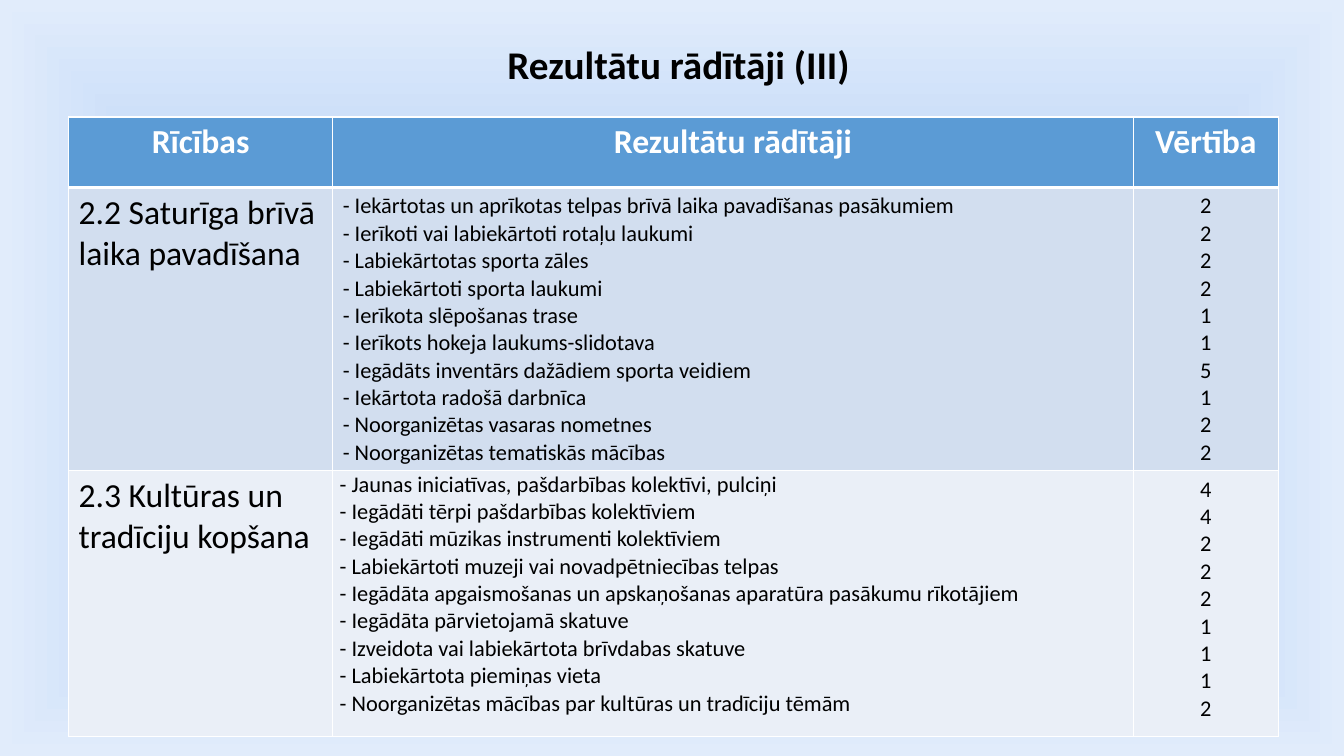
from dataclasses import dataclass

from pptx import Presentation
from pptx.dml.color import RGBColor
from pptx.enum.text import MSO_ANCHOR, PP_ALIGN
from pptx.oxml import parse_xml
from pptx.oxml.ns import nsdecls
from pptx.util import Inches, Pt


@dataclass(frozen=True)
class Theme:
    font: str = "Calibri"
    black: str = "000000"
    white: str = "FFFFFF"
    head: str = "5B9BD5"
    bands: tuple = ("D2DEEF", "EAEFF7")
    glow: tuple = ((0, "FFD966"), (50, "C1D8F8"), (100, "E1ECFB"))
    title: int = 28
    large: int = 24
    small: int = 16


theme = Theme()


def write(frame, text, size=theme.large, color=theme.black, bold=False,
          align=PP_ALIGN.LEFT, space=1.0):
    """Fill a text frame, one paragraph for each line of text."""
    frame.word_wrap = True
    for i, line in enumerate(text.split("\n")):
        para = frame.paragraphs[0] if i == 0 else frame.add_paragraph()
        para.alignment = align
        para.line_spacing = space
        run = para.add_run()
        run.text = line
        run.font.name = theme.font
        run.font.size = Pt(size)
        run.font.bold = bold
        run.font.color.rgb = RGBColor.from_string(color)


def paint(cell, color, base=1):
    """Set the fill and the white borders of a cell; base is the lower width."""
    props = cell._tc.get_or_add_tcPr()
    for side, width in (("L", 1), ("R", 1), ("T", 1), ("B", base)):
        props.append(parse_xml(
            f'<a:ln{side} {nsdecls("a")} w="{Pt(width)}"><a:solidFill>'
            f'<a:srgbClr val="{theme.white}"/></a:solidFill></a:ln{side}>'))
    cell.fill.solid()
    cell.fill.fore_color.rgb = RGBColor.from_string(color)


deck = Presentation()
deck.slide_width, deck.slide_height = Inches(13.33), Inches(7.5)
slide = deck.slides.add_slide(deck.slide_layouts[6])

# Background gradient, from the centre outwards
slide.background.fill.gradient()
grad = slide.element.xpath(".//p:bgPr/a:gradFill")[0]
stops = "".join(f'<a:gs pos="{pos * 1000}"><a:srgbClr val="{color}"/></a:gs>'
                for pos, color in theme.glow)
grad.getparent().replace(grad, parse_xml(
    f'<a:gradFill {nsdecls("a")} rotWithShape="1"><a:gsLst>{stops}</a:gsLst>'
    '<a:path path="shape"><a:fillToRect l="50000" t="50000" r="50000" b="50000"/>'
    '</a:path></a:gradFill>'))

# Title
box = slide.shapes.add_textbox(Inches(0.98), Inches(0.26), Inches(11.5), Inches(0.81))
box.text_frame.vertical_anchor = MSO_ANCHOR.MIDDLE
write(box.text_frame, "Rezultātu rādītāji (III)", size=theme.title, bold=True,
      align=PP_ALIGN.CENTER, space=0.9)

# Table content: action, then pairs of indicator and value
heads = ("Rīcības", "Rezultātu rādītāji", "Vērtība")
groups = (
    ("2.2 Saturīga brīvā laika pavadīšana", (
        ("Iekārtotas un aprīkotas telpas brīvā laika pavadīšanas pasākumiem", 2),
        ("Ierīkoti vai labiekārtoti rotaļu laukumi", 2),
        ("Labiekārtotas sporta zāles", 2),
        ("Labiekārtoti sporta laukumi", 2),
        ("Ierīkota slēpošanas trase", 1),
        ("Ierīkots hokeja laukums-slidotava", 1),
        ("Iegādāts inventārs dažādiem sporta veidiem", 5),
        ("Iekārtota radošā darbnīca", 1),
        ("Noorganizētas vasaras nometnes", 2),
        ("Noorganizētas tematiskās mācības", 2))),
    ("2.3 Kultūras un tradīciju kopšana", (
        ("Jaunas iniciatīvas, pašdarbības kolektīvi, pulciņi", 4),
        ("Iegādāti tērpi pašdarbības kolektīviem", 4),
        ("Iegādāti mūzikas instrumenti kolektīviem", 2),
        ("Labiekārtoti muzeji vai novadpētniecības telpas", 2),
        ("Iegādāta apgaismošanas un apskaņošanas aparatūra pasākumu rīkotājiem", 2),
        ("Iegādāta pārvietojamā skatuve", 1),
        ("Izveidota vai labiekārtota brīvdabas skatuve", 1),
        ("Labiekārtota piemiņas vieta", 1),
        ("Noorganizētas mācības par kultūras un tradīciju tēmām", 2))),
)

# Table grid
wide, high = (2.62, 7.94, 1.44), (0.7, 2.81, 2.64)
table = slide.shapes.add_table(len(high), len(wide), Inches(0.68), Inches(1.16),
                               Inches(sum(wide)), Inches(sum(high))).table
for col, width in zip(table.columns, wide):
    col.width = Inches(width)
for row, height in zip(table.rows, high):
    row.height = Inches(height)

# Header row
for cell, text in zip(table.rows[0].cells, heads):
    paint(cell, theme.head, base=3)
    write(cell.text_frame, text, color=theme.white, bold=True, align=PP_ALIGN.CENTER)

# Body rows
for i, (action, items) in enumerate(groups):
    cells = table.rows[i + 1].cells
    for cell in cells:
        paint(cell, theme.bands[i])
    write(cells[0].text_frame, action)
    write(cells[1].text_frame, "\n".join(f"- {name}" for name, _ in items),
          size=theme.small)
    write(cells[2].text_frame, "\n".join(str(value) for _, value in items),
          size=theme.small, align=PP_ALIGN.CENTER)

# The last list sits closer to its cell edges
tight = table.cell(2, 1)
tight.margin_left = tight.margin_right = Inches(0.07)
tight.margin_top = tight.margin_bottom = 0

deck.save("out.pptx")
